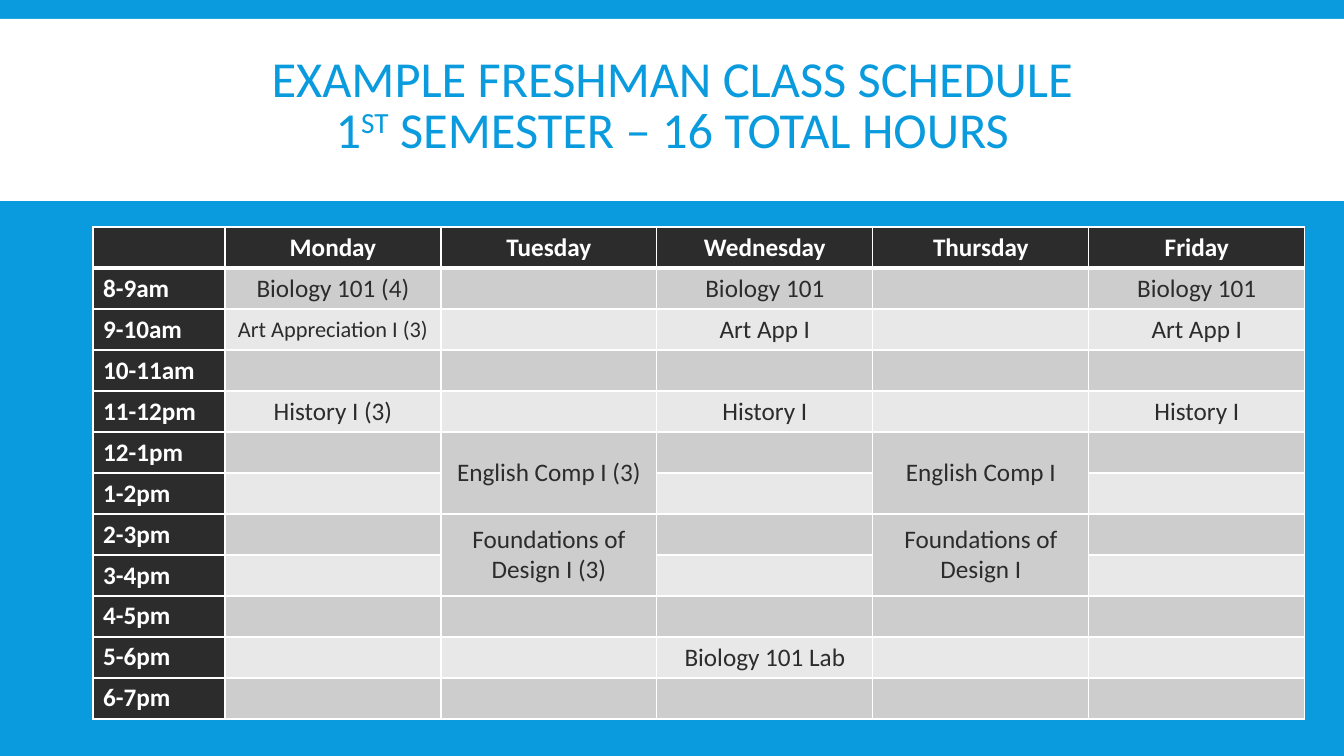
from lxml import etree
from pptx import Presentation
from pptx import util as u
from pptx.dml.color import RGBColor
from pptx.enum import shapes, text
from pptx.oxml import ns

PX = 914400 / 100.8
BLUE, WHITE, DARK = "099BDD", "FFFFFF", "2C2C2C"
BANDS = ["CDCDCD", "E8E8E8"]


def paint(target, colour):
    if hasattr(target, "solid"):
        target.solid()
        target = target.fore_color
    target.rgb = RGBColor.from_string(colour)


def write(paragraph, content, size=18, colour=DARK, bold=False, align="CENTER", baseline=0):
    paragraph.alignment = text.PP_ALIGN[align]
    run = paragraph.add_run()
    run.text = content
    run.font.name = "Calibri"
    run.font.size = u.Pt(size)
    run.font.bold = bold
    paint(run.font.fill, colour)
    if baseline:
        run.font._element.set("baseline", str(baseline))


presentation = Presentation()
presentation.slide_width = round(1344 * PX)
presentation.slide_height = round(756 * PX)
slide = presentation.slides.add_slide(presentation.slide_layouts[5])
paint(slide.background.fill, BLUE)

title = slide.shapes.title
title.left, title.top, title.width, title.height = [round(n * PX) for n in (93, 40, 1159, 135)]
title.text_frame.word_wrap = True
title.text_frame.auto_size = text.MSO_AUTO_SIZE.NONE
title.text_frame.vertical_anchor = text.MSO_ANCHOR.MIDDLE
heading = title.text_frame.paragraphs[0]
heading.line_spacing = 0.85
write(heading, "EXAMPLE FRESHMAN CLASS SCHEDULE", size=36, colour=BLUE)
heading.add_line_break()
write(heading, "1", size=36, colour=BLUE)
write(heading, "ST", size=36, colour=BLUE, baseline=30000)
write(heading, " SEMESTER – 16 TOTAL HOURS", size=36, colour=BLUE)

title_band = slide.shapes.add_shape(
    shapes.MSO_SHAPE.RECTANGLE, 0, round(19 * PX), presentation.slide_width, round(182 * PX))
title_band.shadow.inherit = False
paint(title_band.fill, WHITE)
title_band.line.fill.background()
title.element.addprevious(title_band.element)

days = ["", "Monday", "Tuesday", "Wednesday", "Thursday", "Friday"]
hours = ["8-9am", "9-10am", "10-11am", "11-12pm", "12-1pm", "1-2pm",
         "2-3pm", "3-4pm", "4-5pm", "5-6pm", "6-7pm"]
classes = {
    (1, 1): "Biology 101 (4)", (1, 3): "Biology 101", (1, 5): "Biology 101",
    (2, 1): "Art Appreciation I (3)", (2, 3): "Art App I", (2, 5): "Art App I",
    (4, 1): "History I (3)", (4, 3): "History I", (4, 5): "History I",
    (5, 2): "English Comp I (3)", (5, 4): "English Comp I",
    (7, 2): "Foundations of Design I (3)", (7, 4): "Foundations of Design I",
    (10, 3): "Biology 101 Lab",
}
smaller_sizes = {(2, 1): 16}

schedule = slide.shapes.add_table(
    len(hours) + 1, len(days),
    *[round(n * PX) for n in (93, 227, 132 + 5 * 216, 12 * 41)]).table
for index, column in enumerate(schedule.columns):
    column.width = round((216 if index else 132) * PX)
for row in schedule.rows:
    row.height = round(41 * PX)
for row in (5, 7):
    for column in (2, 4):
        schedule.cell(row, column).merge(schedule.cell(row + 1, column))

for row in range(len(hours) + 1):
    for column in range(len(days)):
        cell = schedule.cell(row, column)
        paragraph = cell.text_frame.paragraphs[0]
        if row == 0:
            paint(cell.fill, DARK)
            if days[column]:
                write(paragraph, days[column], colour=WHITE, bold=True)
        elif column == 0:
            paint(cell.fill, DARK)
            write(paragraph, hours[row - 1], colour=WHITE, bold=True, align="LEFT")
        else:
            paint(cell.fill, BANDS[(row - 1) % 2])
            cell.vertical_anchor = text.MSO_ANCHOR.MIDDLE
            if (row, column) in classes:
                write(paragraph, classes[row, column], size=smaller_sizes.get((row, column), 18))

        properties = cell._tc.get_or_add_tcPr()
        for position, side in enumerate("LRTB"):
            thick = (row, side) in [(0, "B"), (1, "T")]
            border = etree.Element(ns.qn("a:ln" + side), w=str(u.Pt(3 if thick else 1)))
            fill = etree.SubElement(border, ns.qn("a:solidFill"))
            etree.SubElement(fill, ns.qn("a:srgbClr"), val=WHITE)
            properties.insert(position, border)

presentation.save("out.pptx")
